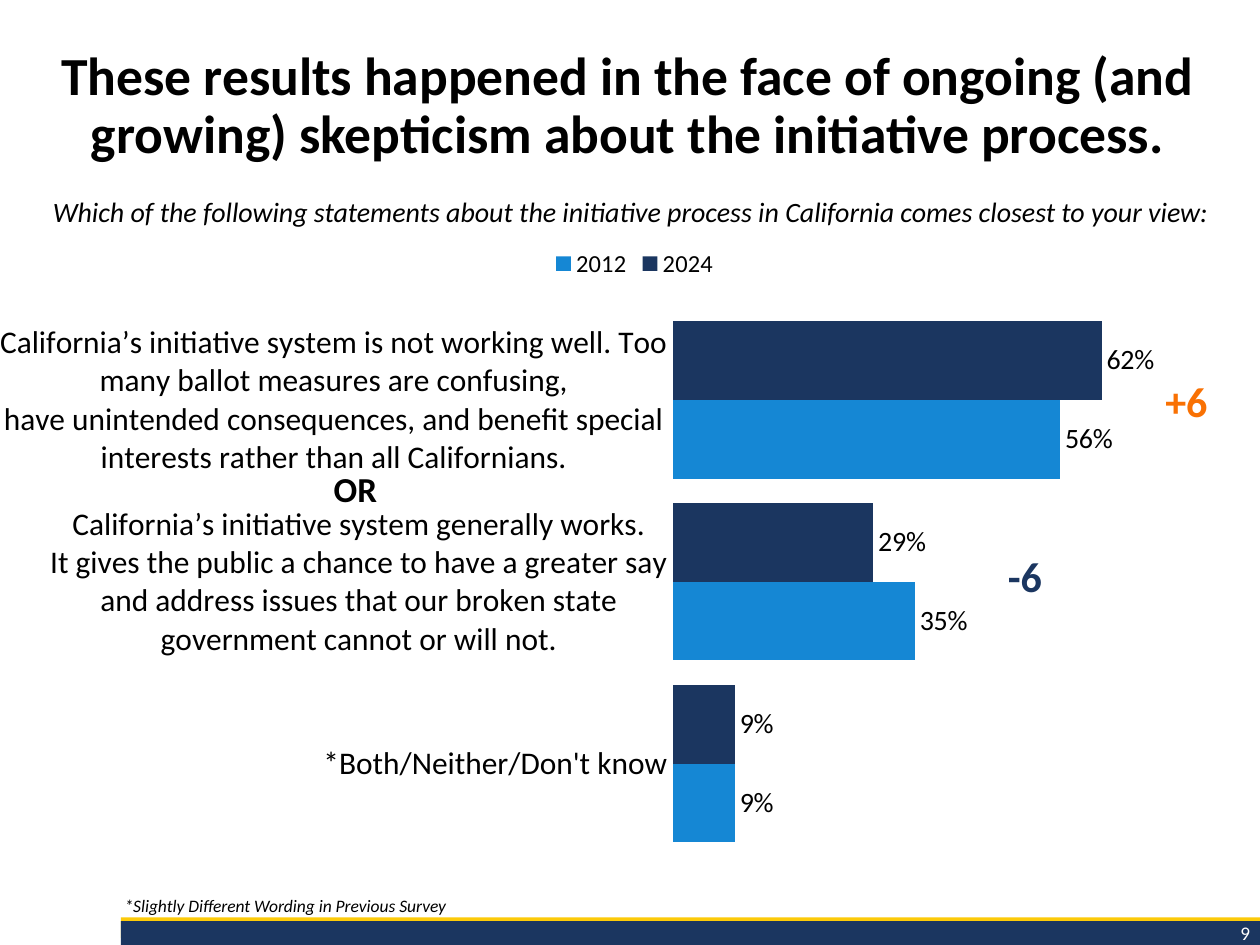
from lxml import etree
from pptx import Presentation
from pptx.chart.data import CategoryChartData
from pptx.dml.color import RGBColor
from pptx.enum import chart as ch, shapes, text
from pptx.oxml.ns import qn
from pptx.util import Pt

FONT = "Calibri"
BLACK = RGBColor(0x00, 0x00, 0x00)
WHITE = RGBColor(0xFF, 0xFF, 0xFF)
NAVY = RGBColor(0x1B, 0x36, 0x60)
BLUE = RGBColor(0x15, 0x87, 0xD4)
GOLD = RGBColor(0xFC, 0xCA, 0x09)
ORANGE = RGBColor(0xF9, 0x71, 0x03)
CENTER = text.PP_ALIGN.CENTER
BOTTOM = text.MSO_ANCHOR.BOTTOM

CATEGORIES = [
    "California’s initiative system is not working well. "
    "Too many ballot measures are confusing,\n"
    "have unintended consequences, and benefit special "
    "interests rather than all Californians.",
    "California’s initiative system generally works.\n"
    "It gives the public a chance to have a greater say "
    "and address issues that our broken state government cannot or will not.",
    "*Both/Neither/Don't know",
]
SERIES = [("2024", (0.62, 0.29, 0.09), NAVY), ("2012", (0.56, 0.35, 0.09), BLUE)]


def set_font(font, size, color=BLACK, bold=False, italic=False):
    font.name = FONT
    font.size = Pt(size)
    font.color.rgb = color
    font.bold = bold
    font.italic = italic


def add_text(s, box, words, size, color=BLACK, bold=False, italic=False,
             align=None, anchor=text.MSO_ANCHOR.TOP, spacing=None, wrap=True):
    sp = s.shapes.add_textbox(*map(Pt, box))
    tf = sp.text_frame
    tf.word_wrap = wrap
    tf.vertical_anchor = anchor
    tf.text = words
    p = tf.paragraphs[0]
    p.alignment = align
    p.line_spacing = spacing
    set_font(p.runs[0].font, size, color, bold, italic)


def add_bar(s, box, color):
    sp = s.shapes.add_shape(shapes.MSO_SHAPE.RECTANGLE, *map(Pt, box))
    sp.shadow.inherit = False
    sp.fill.solid()
    sp.fill.fore_color.rgb = color
    sp.line.fill.background()


def add_footer(s, left, top, width, height):
    add_bar(s, (left, top, width, height - 4), GOLD)
    add_bar(s, (left, top + 2.2, width, height - 2.2), NAVY)
    add_text(s, (left + width - 105.1, top - 1.4, 106.5, 21), "9", 11, WHITE,
             align=text.PP_ALIGN.RIGHT)
    add_text(s, (left - 5, top - 36, width + 3.5, 39),
             "*Slightly Different Wording in Previous Survey", 10,
             italic=True, anchor=BOTTOM, spacing=0.9)


def add_heading(s, left, top, width):
    add_text(s, (left, top, width, 88),
             "These results happened in the face of ongoing (and growing) "
             "skepticism about the initiative process.",
             30.6, bold=True, align=CENTER, spacing=0.9)
    add_text(s, (left - 1.4, top + 84.2, width + 6.4, 25.2),
             "Which of the following statements about the initiative process "
             "in California comes closest to your view:",
             16, italic=True, align=CENTER, spacing=Pt(18))


def set_plot_layout(chart, x, y, w, h):
    area = chart._chartSpace.chart.plotArea
    for old in area.findall(qn("c:layout")):
        area.remove(old)
    layout = etree.Element(qn("c:layout"))
    manual = etree.SubElement(layout, qn("c:manualLayout"))
    settings = [("layoutTarget", "inner"), ("xMode", "edge"), ("yMode", "edge"),
                ("x", x), ("y", y), ("w", w), ("h", h)]
    for tag, val in settings:
        etree.SubElement(manual, qn("c:" + tag)).set("val", str(val))
    area.insert(0, layout)


def add_opinion_chart(s, left, top, width, height):
    data = CategoryChartData(number_format="0%")
    data.categories = CATEGORIES
    for name, values, _ in SERIES:
        data.add_series(name, values)
    chart = s.shapes.add_chart(ch.XL_CHART_TYPE.BAR_CLUSTERED,
                               *map(Pt, (left, top, width, height)), data).chart
    set_font(chart.font, 10)
    chart.has_title = False
    chart.has_legend = True
    chart.legend.position = ch.XL_LEGEND_POSITION.TOP
    chart.legend.include_in_layout = False
    set_font(chart.legend.font, 14)

    cat_axis = chart.category_axis
    cat_axis.reverse_order = True
    cat_axis.major_tick_mark = ch.XL_TICK_MARK.NONE
    cat_axis.format.line.fill.background()
    set_font(cat_axis.tick_labels.font, 18)
    val_axis = chart.value_axis
    val_axis.minimum_scale = 0
    val_axis.maximum_scale = 0.75
    val_axis.major_unit = 0.15
    val_axis.has_major_gridlines = False
    val_axis.visible = False

    plot = chart.plots[0]
    plot.gap_width = 31
    plot.overlap = 0
    plot.vary_by_categories = False
    for ser, (_, _, color) in zip(plot.series, SERIES):
        ser.format.fill.solid()
        ser.format.fill.fore_color.rgb = color
        labels = ser.data_labels
        labels.show_value = True
        labels.number_format = "0%"
        labels.number_format_is_linked = False
        labels.position = ch.XL_LABEL_POSITION.OUTSIDE_END
        set_font(labels.font, 16)
    set_plot_layout(chart, 0.53, 0.115, 0.411, 0.841)


def add_chart_notes(s, left, top):
    add_text(s, (left + 183.6, top + 129.6, 39.6, 31.7), "OR", 20,
             bold=True, wrap=False)
    for x, y, words, color in [(658.8, 77, "+6", ORANGE), (568.8, 177.1, "-6", NAVY)]:
        add_text(s, (left + x, top + y, 47.5, 36), words, 24, color,
                 bold=True, anchor=BOTTOM)


def main():
    prs = Presentation()
    prs.slide_width = Pt(720)
    prs.slide_height = Pt(540)
    s = prs.slides.add_slide(prs.slide_layouts[6])
    add_footer(s, 69.1, 524.2, 650.9, 15.8)
    add_heading(s, -1.4, 24.5, 720)
    add_opinion_chart(s, 0, 133.9, 723.6, 370.8)
    add_chart_notes(s, 0, 133.9)
    prs.save("out.pptx")


if __name__ == "__main__":
    main()
